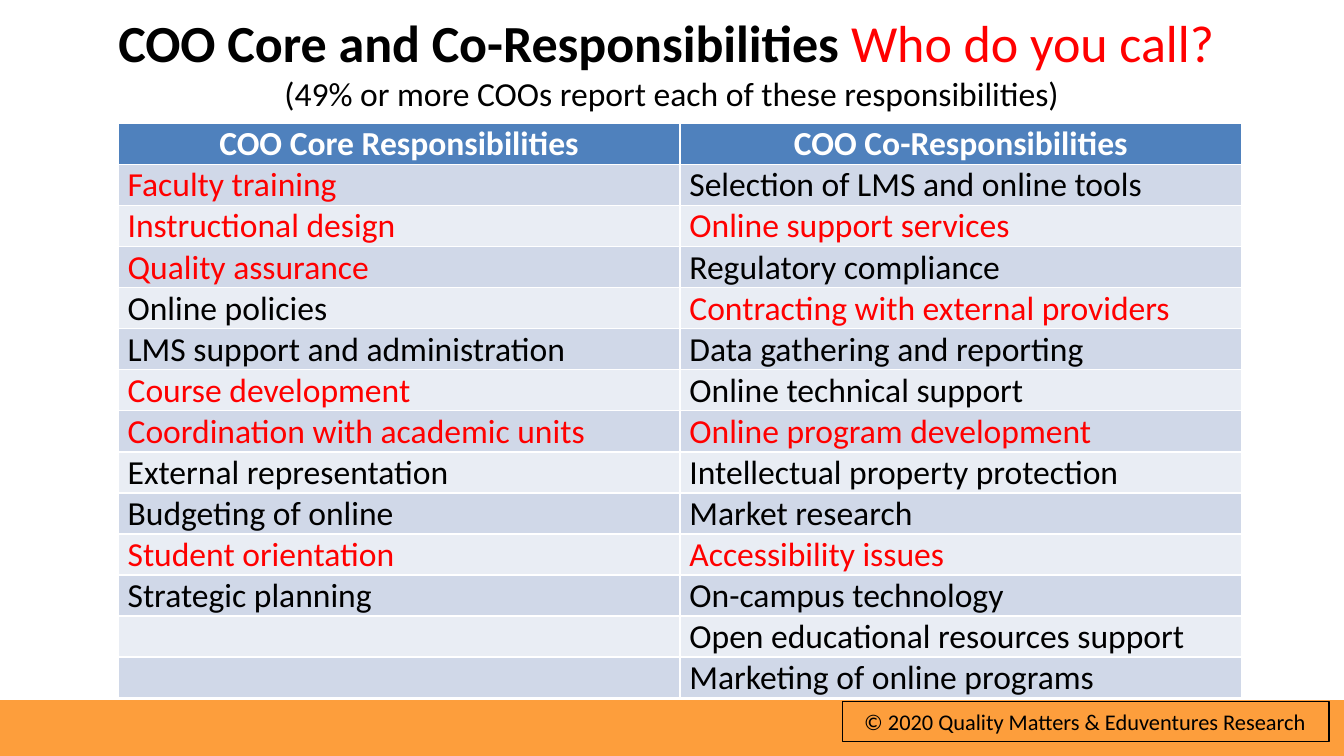
from pptx import Presentation
from pptx import util as u
from pptx.dml import color
from pptx.enum import shapes, text


def rgb(value):
    return color.RGBColor.from_string(value)


def add_run(p, content, size, hue="000000", bold=False):
    r = p.add_run()
    r.text = content
    values = {"name": "Calibri", "size": u.Pt(size), "bold": bold}
    for name, value in values.items():
        setattr(r.font, name, value)
    r.font.color.rgb = rgb(hue)


RED = "FF0000"
prs = Presentation()
prs.slide_width = u.Inches(10)
prs.slide_height = u.Inches(10 * 9 / 16)
s = prs.slides.add_slide(prs.slide_layouts[5])

# Footer band and copyright box
band = s.shapes.add_shape(shapes.MSO_SHAPE.RECTANGLE, 0, u.Inches(5.21),
                          prs.slide_width, prs.slide_height - u.Inches(5.21))
band.shadow.inherit = False
band.fill.solid()
band.fill.fore_color.rgb = rgb("FD9E3C")
band.line.fill.background()

notice = s.shapes.add_textbox(u.Inches(6.27), u.Inches(5.22),
                              u.Inches(3.62), u.Inches(0.3))
notice.line.color.rgb = rgb("000000")
notice.line.width = u.Pt(0.75)
tf = notice.text_frame
frame = {"word_wrap": True, "margin_left": u.Inches(0.1),
         "margin_right": u.Inches(0.11)}
for name, value in frame.items():
    setattr(tf, name, value)
p = tf.paragraphs[0]
p.alignment = text.PP_ALIGN.CENTER
add_run(p, "© 2020 Quality Matters & Eduventures Research", 12)

# Title
title = s.shapes.title
place = {"left": 0.5, "top": 0.12, "width": 9, "height": 0.68}
for name, value in place.items():
    setattr(title, name, u.Inches(value))
tf = title.text_frame
tf.auto_size = text.MSO_AUTO_SIZE.NONE
tf.vertical_anchor = text.MSO_ANCHOR.MIDDLE
p = tf.paragraphs[0]
p.alignment = text.PP_ALIGN.CENTER
add_run(p, "COO Core and Co-Responsibilities ", 27.9, bold=True)
add_run(p, "Who do you call? ", 27.9, RED)
p.add_line_break()
add_run(p, "(49% or more COOs report each of these responsibilities)", 18)

# Responsibilities, column by column
columns = [
    ["COO Core Responsibilities", "Faculty training", "Instructional design",
     "Quality assurance", "Online policies", "LMS support and administration",
     "Course development", "Coordination with academic units",
     "External representation", "Budgeting of online", "Student orientation",
     "Strategic planning", "", ""],
    ["COO Co-Responsibilities", "Selection of LMS and online tools",
     "Online support services", "Regulatory compliance",
     "Contracting with external providers", "Data gathering and reporting",
     "Online technical support", "Online program development",
     "Intellectual property protection", "Market research",
     "Accessibility issues", "On-campus technology",
     "Open educational resources support", "Marketing of online programs"],
]
red_rows = [{1, 2, 3, 6, 7, 10}, {2, 4, 7, 10}]
count = len(columns[0])

# Table; the default style supplies the white borders
table = s.shapes.add_table(count, 2, u.Inches(0.88), u.Inches(0.92),
                           u.Inches(8.36), u.Inches(4.2)).table
for row in table.rows:
    row.height = u.Inches(0.29)
margins = {"margin_left": u.Inches(0.07), "margin_right": u.Inches(0.07),
           "margin_top": u.Pt(0.18), "margin_bottom": u.Pt(0.18)}
for col, labels in enumerate(columns):
    for row, label in enumerate(labels):
        cell = table.cell(row, col)
        header = row == 0
        for name, value in margins.items():
            setattr(cell, name, value)
        cell.fill.solid()
        stripe = "D0D8E8" if row % 2 else "E9EDF4"
        cell.fill.fore_color.rgb = rgb("4F81BD" if header else stripe)

        p = cell.text_frame.paragraphs[0]
        if header:
            p.alignment = text.PP_ALIGN.CENTER
            add_run(p, label, 18, "FFFFFF", True)
        elif label:
            add_run(p, label, 18, RED if row in red_rows[col] else "000000")
        else:
            p.font.size = u.Pt(18)

prs.save("out.pptx")
